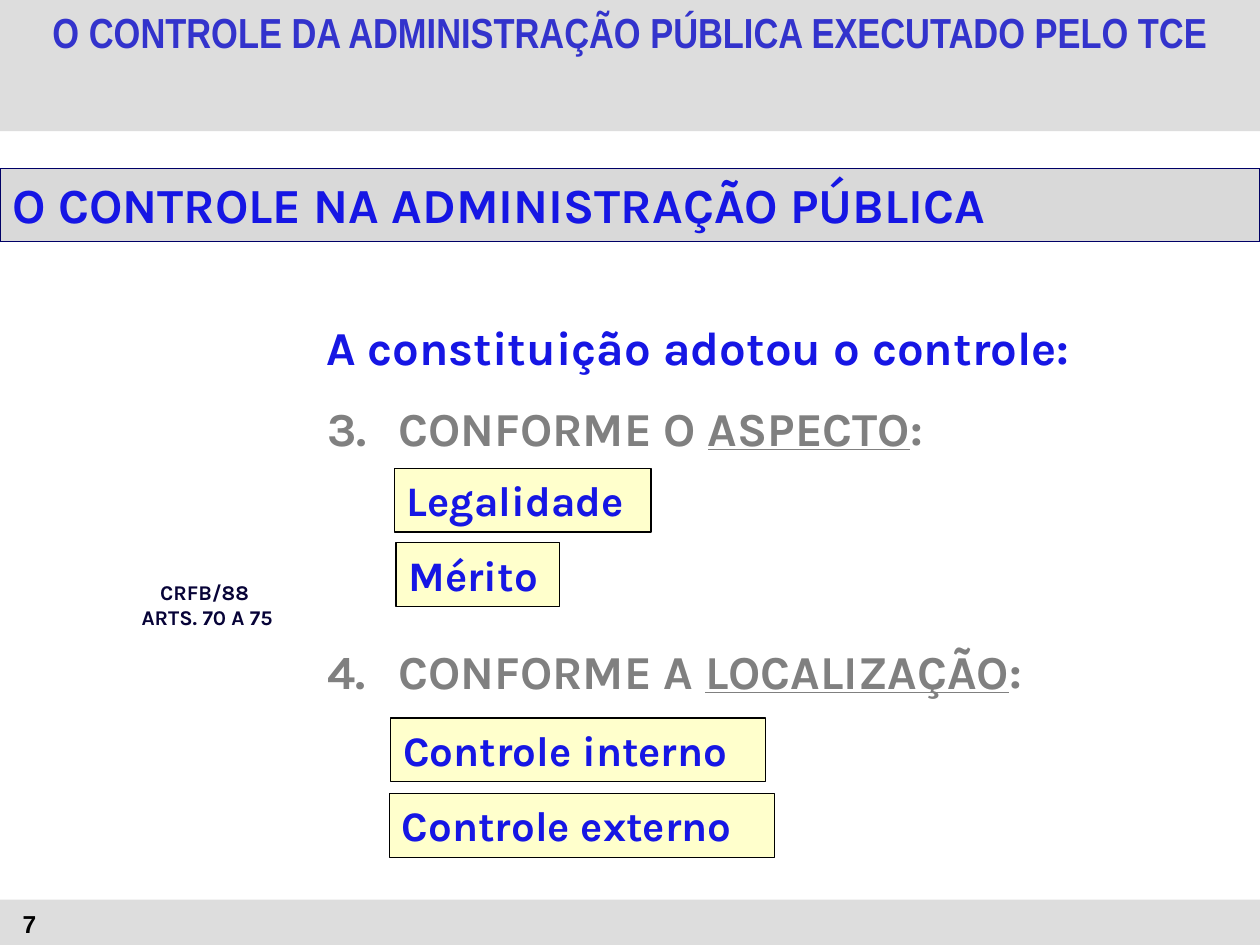
from dataclasses import dataclass
from typing import Optional

from lxml.etree import SubElement
from pptx import Presentation
from pptx.dml.color import RGBColor
from pptx.enum.shapes import MSO_SHAPE
from pptx.enum.text import MSO_ANCHOR, PP_ALIGN
from pptx.oxml.ns import qn
from pptx.util import Pt

BLUE = RGBColor(0x16, 0x16, 0xE4)
TITLE_BLUE = RGBColor(0x33, 0x33, 0xCC)
NAVY = RGBColor(0x07, 0x03, 0x37)
DARK_BLUE = RGBColor(0x00, 0x00, 0x66)
BLACK = RGBColor(0x00, 0x00, 0x00)
GRAY = RGBColor(0x80, 0x80, 0x80)
BAND_GRAY = RGBColor(0xDD, 0xDD, 0xDD)
HEADING_GRAY = RGBColor(0xD9, 0xD9, 0xD9)
YELLOW = RGBColor(0xFF, 0xFF, 0xCC)
WHITE = RGBColor(0xFF, 0xFF, 0xFF)

WIDTH, HEIGHT = 720, 540
HANGING_INDENT = Pt(40.5)


@dataclass(frozen=True)
class Area:
    left: float
    top: float
    width: float
    height: float


@dataclass(frozen=True)
class TextFormat:
    size: float
    color: RGBColor
    name: str = "Karla"
    align: PP_ALIGN = PP_ALIGN.LEFT


@dataclass(frozen=True)
class Topic:
    number: int
    lead: str
    term: str
    area: Area


@dataclass(frozen=True)
class Label:
    text: str
    area: Area


ITEM = TextFormat(24, BLUE)
TOPIC = TextFormat(27, GRAY)

TOPICS = [
    Topic(3, "CONFORME O ", "ASPECTO", Area(180, 224.5, 510, 40.5)),
    Topic(4, "CONFORME A ", "LOCALIZAÇÃO", Area(180, 363.5, 464.5, 40.5)),
]
ITEMS = [
    Label("Legalidade", Area(225.5, 267.7, 146.5, 36.4)),
    Label("Mérito", Area(226.3, 310.2, 93.5, 36.4)),
    Label("Controle interno", Area(223.3, 410.3, 214, 36.4)),
    Label("Controle externo", Area(222.5, 453.5, 220, 36.4)),
]


def set_all(target, values: dict) -> None:
    for name, value in values.items():
        setattr(target, name, value)


def add_box(slide, area: Area, fill: RGBColor, line: Optional[RGBColor] = None):
    shape = slide.shapes.add_shape(
        MSO_SHAPE.RECTANGLE, Pt(area.left), Pt(area.top), Pt(area.width), Pt(area.height)
    )
    shape.shadow.inherit = False
    shape.fill.solid()
    shape.fill.fore_color.rgb = fill
    if line is None:
        shape.line.fill.background()
    else:
        shape.line.color.rgb = line
        shape.line.width = Pt(0.75)
    return shape


def add_text_area(slide, area: Area):
    return slide.shapes.add_textbox(
        Pt(area.left), Pt(area.top), Pt(area.width), Pt(area.height)
    )


def add_run(paragraph, text: str, style: TextFormat, underline: bool = False):
    run = paragraph.add_run()
    run.text = text
    set_all(run.font, {"name": style.name, "size": Pt(style.size),
                       "bold": True, "underline": underline})
    run.font.color.rgb = style.color
    return run


def write(shape, lines: list[str], style: TextFormat,
          anchor: MSO_ANCHOR = MSO_ANCHOR.TOP, wrap: bool = True) -> list:
    frame = shape.text_frame
    set_all(frame, {"word_wrap": wrap, "vertical_anchor": anchor})
    runs = []
    for index, line in enumerate(lines):
        paragraph = frame.add_paragraph() if index else frame.paragraphs[0]
        paragraph.alignment = style.align
        runs.append(add_run(paragraph, line, style))
    return runs


def add_text_shadow(run) -> None:
    effects = SubElement(run.font.fill._xPr, qn("a:effectLst"))
    run.font.fill._xPr.find(qn("a:solidFill")).addnext(effects)
    shadow = SubElement(effects, qn("a:outerShdw"),
                        {"dist": str(Pt(2)), "dir": "2700000", "algn": "tl"})
    SubElement(shadow, qn("a:srgbClr"), {"val": str(GRAY)})


def add_topic(slide, topic: Topic) -> None:
    shape = add_box(slide, topic.area, WHITE)
    write(shape, [topic.lead], TOPIC)
    paragraph = shape.text_frame.paragraphs[0]
    add_run(paragraph, topic.term, TOPIC, underline=True)
    add_run(paragraph, ":", TOPIC)
    properties = paragraph._p.get_or_add_pPr()
    properties.set("marL", str(HANGING_INDENT))
    properties.set("indent", str(-HANGING_INDENT))
    SubElement(properties, qn("a:buFont"), {"typeface": TOPIC.name})
    SubElement(properties, qn("a:buAutoNum"),
               {"type": "arabicPeriod", "startAt": str(topic.number)})


def main() -> None:
    presentation = Presentation()
    set_all(presentation, {"slide_width": Pt(WIDTH), "slide_height": Pt(HEIGHT)})
    slide = presentation.slides.add_slide(presentation.slide_layouts[6])

    add_box(slide, Area(0, 514, WIDTH, 26), BAND_GRAY)
    add_box(slide, Area(0, 0, WIDTH, 75), BAND_GRAY)
    title = add_text_area(slide, Area(0, 0, WIDTH, 65.5))
    title_style = TextFormat(24, TITLE_BLUE, "Arial Narrow", PP_ALIGN.CENTER)
    for run in write(title, ["O CONTROLE DA ADMINISTRAÇÃO PÚBLICA EXECUTADO PELO TCE"],
                     title_style):
        add_text_shadow(run)

    statement = add_box(slide, Area(179.3, 178.5, 465, 40.5), WHITE)
    write(statement, ["A constituição adotou o controle:"], TextFormat(27, BLUE))
    reference = add_text_area(slide, Area(68.4, 327.6, 100, 36.7))
    write(reference, ["CRFB/88 ", "ARTS. 70 A 75"],
          TextFormat(12, NAVY, align=PP_ALIGN.CENTER), wrap=False)

    for topic in TOPICS:
        add_topic(slide, topic)
    for item in ITEMS:
        write(add_box(slide, item.area, YELLOW, BLACK), [item.text], ITEM)

    heading = add_box(slide, Area(0, 96.3, WIDTH, 41.7), HEADING_GRAY, DARK_BLUE)
    write(heading, ["O CONTROLE NA ADMINISTRAÇÃO PÚBLICA"], TextFormat(28, BLUE))
    number = add_text_area(slide, Area(5.8, 504, 150, 36))
    write(number, ["7"], TextFormat(14, BLACK, "Arial"), anchor=MSO_ANCHOR.BOTTOM)

    presentation.save("out.pptx")


if __name__ == "__main__":
    main()
